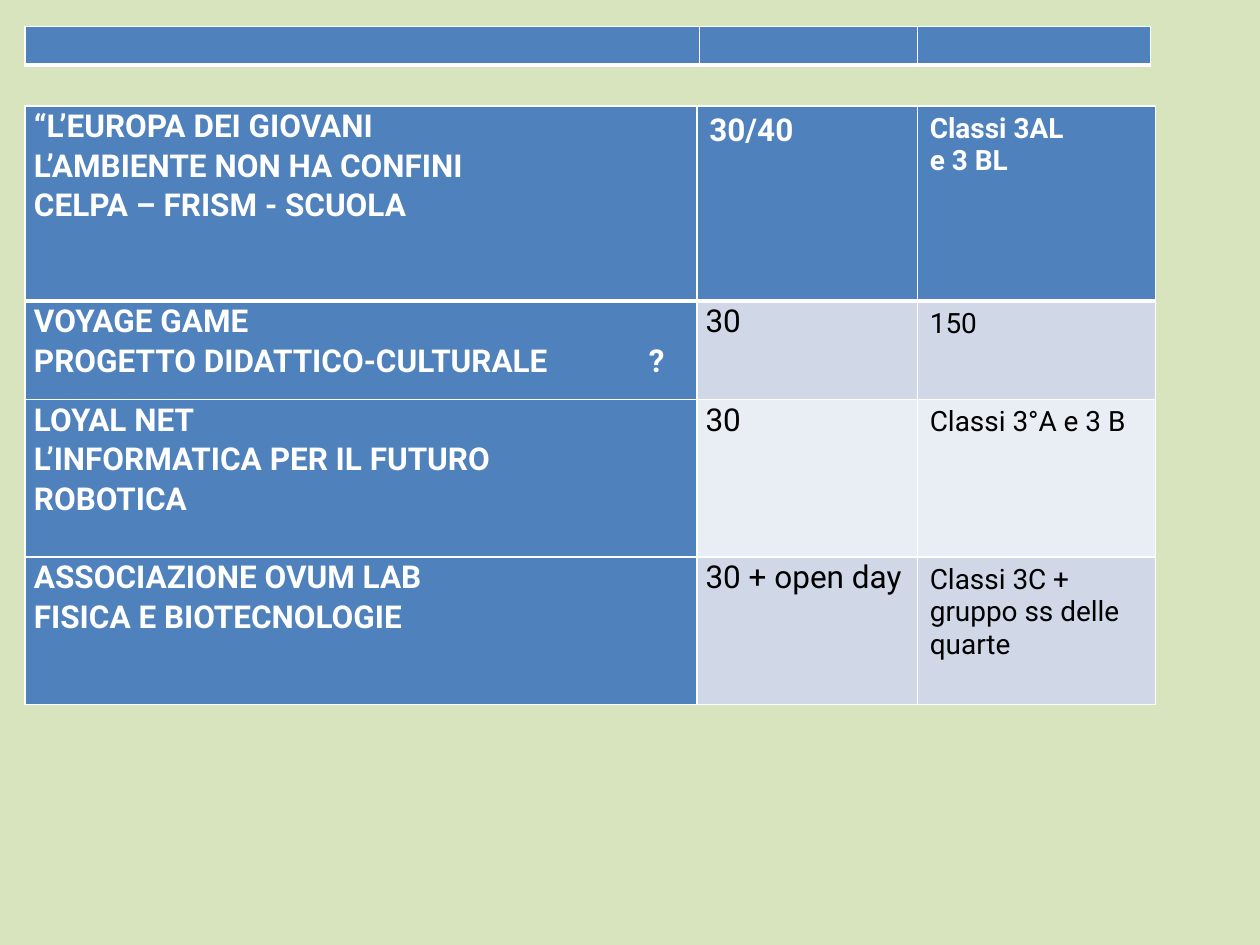
from lxml import etree
from pptx import Presentation, util as u
from pptx.dml import color
from pptx.oxml import ns

Inches = u.Inches
BLUE, BAND, LIGHT_BAND = "4F81BD", "D0D8E8", "E9EDF4"
WHITE, BLACK, BACKGROUND = "FFFFFF", "000000", "D7E4BD"

TIGHT = {"margin_left": Inches(0.07), "margin_right": Inches(0.07),
         "margin_top": 0, "margin_bottom": 0}
LOOSE = {"margin_left": Inches(0.1), "margin_right": Inches(0.1),
         "margin_top": Inches(0.05), "margin_bottom": Inches(0.05)}

PROJECTS = [
    (["“L’EUROPA DEI GIOVANI", "L’AMBIENTE NON HA CONFINI",
      "CELPA – FRISM - SCUOLA"], ["30/40"], ["Classi 3AL", "e 3 BL"]),
    (["VOYAGE GAME", "PROGETTO DIDATTICO-CULTURALE\t?"], ["30"], ["150"]),
    (["LOYAL NET", "L’INFORMATICA PER IL FUTURO", "ROBOTICA"],
     ["30"], ["Classi 3°A e 3 B"]),
    (["OVUM LAB ASSOCIAZIONE", "FISICA E BIOTECNOLOGIE"],
     ["30 + open day"], ["Classi 3C + gruppo ss delle quarte"]),
]
PROJECTS[3][0][0] = "ASSOCIAZIONE OVUM LAB"


def rgb(value):
    return color.RGBColor.from_string(value)


def apply(target, values):
    for name, value in values.items():
        setattr(target, name, value)


class SlideBuilder:
    font_name = "Roboto"

    def __init__(self, presentation):
        self.slide = presentation.slides.add_slide(presentation.slide_layouts[6])

    def background(self, value):
        fill = self.slide.background.fill
        fill.solid()
        fill.fore_color.rgb = rgb(value)

    def table(self, left, top, columns, rows):
        shape = self.slide.shapes.add_table(
            len(rows), len(columns), Inches(left), Inches(top),
            Inches(sum(columns)), Inches(sum(rows)))
        table = shape.table
        apply(table, {"first_row": False, "horz_banding": False})
        for column, width in zip(table.columns, columns):
            column.width = Inches(width)
        for row, height in zip(table.rows, rows):
            row.height = Inches(height)
        return table

    def cell(self, cell, fill, margins, top=1, bottom=1):
        apply(cell, margins)
        properties = cell._tc.get_or_add_tcPr()
        for side, width in zip("LRTB", (1, 1, top, bottom)):
            line = etree.SubElement(properties, ns.qn("a:ln" + side), w=str(u.Pt(width)))
            solid = etree.SubElement(line, ns.qn("a:solidFill"))
            etree.SubElement(solid, ns.qn("a:srgbClr"), val=WHITE)
        cell.fill.solid()
        cell.fill.fore_color.rgb = rgb(fill)

    def text(self, cell, lines, size, value, bold, spacing=None):
        frame = cell.text_frame
        for index, content in enumerate(lines):
            paragraph = frame.add_paragraph() if index else frame.paragraphs[0]
            if spacing:
                paragraph.line_spacing = spacing
            if "\t" in content:
                self.tab_stop(paragraph, 4.88)
            run = paragraph.add_run()
            run.text = content
            apply(run.font, {"name": self.font_name, "size": u.Pt(size), "bold": bold})
            run.font.color.rgb = rgb(value)

    def tab_stop(self, paragraph, position):
        tabs = etree.SubElement(paragraph._p.get_or_add_pPr(), ns.qn("a:tabLst"))
        etree.SubElement(tabs, ns.qn("a:tab"), pos=str(Inches(position)), algn="l")


def main():
    presentation = Presentation()
    apply(presentation, {"slide_width": Inches(10), "slide_height": Inches(7.5)})
    builder = SlideBuilder(presentation)
    builder.background(BACKGROUND)

    header_strip = builder.table(0.2, 0.21, [5.35, 1.73, 1.85], [0.3])
    for cell in header_strip.iter_cells():
        builder.cell(cell, BLUE, TIGHT, bottom=3)

    projects = builder.table(0.2, 0.84, [5.33, 1.75, 1.89], [1.55, 0.78, 1.25, 1.17])
    for row, project in enumerate(PROJECTS):
        band = BAND if row % 2 else LIGHT_BAND
        for column, lines in enumerate(project):
            heading = row == 0 or column == 0
            tight = column == 0 or (column == 1 and row > 0)
            cell = projects.cell(row, column)
            builder.cell(cell, BLUE if heading else band, TIGHT if tight else LOOSE,
                         top=3 if row == 1 else 1, bottom=3 if row == 0 else 1)
            builder.text(cell, lines, 16 if column == 2 else 18,
                         WHITE if heading else BLACK, heading, 1.07 if tight else None)

    presentation.save("out.pptx")


if __name__ == "__main__":
    main()
